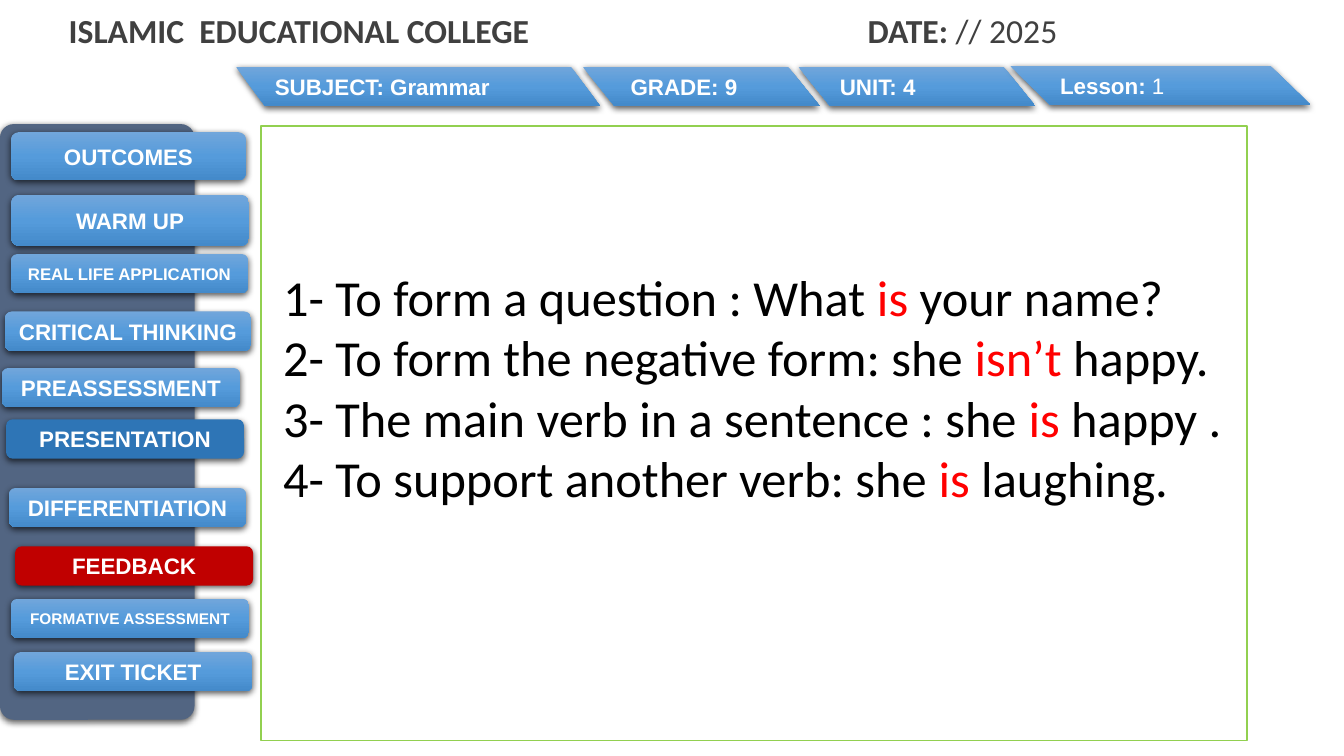
from copy import deepcopy
from pptx import Presentation
from pptx.dml.color import RGBColor
from pptx.enum.shapes import MSO_SHAPE
from pptx.enum.text import MSO_ANCHOR, MSO_AUTO_SIZE, PP_ALIGN
from pptx.oxml import parse_xml
from pptx.oxml.ns import nsdecls, qn
from pptx.util import Pt

HUES = {
    "top": "71A6DB", "mid": "559BDB", "low": "448ACA",
    "panel": "526582", "now": "2E75B6", "alert": "C00000",
    "frame": "92D050", "head": "404040", "white": "FFFFFF",
    "black": "000000", "red": "FF0000",
}
SHADE = (
    f'<a:outerShdw {nsdecls("a")} blurRad="57150" dist="19050" dir="5400000" '
    'algn="ctr" rotWithShape="0"><a:srgbClr val="000000">'
    '<a:alpha val="63000"/></a:srgbClr></a:outerShdw>'
)


def add_run(para, text, size, hue, bold=False, face="Arial"):
    run = para.add_run()
    run.text = text
    run.font.name = face
    run.font.size = Pt(size)
    run.font.bold = bold
    run.font.color.rgb = RGBColor.from_string(HUES[hue])


def add_tile(kind, left, top, width, height, hue=None):
    tile = slide.shapes.add_shape(kind, Pt(left), Pt(top), Pt(width), Pt(height))
    tile.line.fill.background()
    tile.shadow.inherit = False
    props = tile.element.spPr
    props.find(qn("a:effectLst")).append(parse_xml(SHADE))
    tile.text_frame.vertical_anchor = MSO_ANCHOR.MIDDLE
    if hue:
        tile.fill.solid()
        tile.fill.fore_color.rgb = RGBColor.from_string(HUES[hue])
    else:
        tile.fill.gradient()
        tile.fill.gradient_angle = 270
        stops = props.find(".//" + qn("a:gsLst"))
        stops.append(deepcopy(stops[-1]))
        for stop, name, place in zip(tile.fill.gradient_stops, ("top", "mid", "low"), (0, 0.5, 1)):
            stop.color.rgb = RGBColor.from_string(HUES[name])
            stop.position = place
    return tile


deck = Presentation()
deck.slide_width = Pt(960)
deck.slide_height = Pt(540)
slide = deck.slides.add_slide(deck.slide_layouts[6])

panel = add_tile(MSO_SHAPE.ROUNDED_RECTANGLE, 0, 88.6, 139, 425.5, "panel")
panel.adjustments[0] = 0.071

STEPS = [
    ("OUTCOMES", 7.9, 94.3, 167.8, 34.6, 16, None),
    ("WARM UP", 7.9, 139, 170, 36.7, 16, None),
    ("REAL LIFE APPLICATION", 7.9, 181.4, 169.2, 28.1, 12, None),
    ("CRITICAL THINKING", 3.6, 222.5, 175.7, 28.1, 16, None),
    ("PREASSESSMENT", 1.4, 262.8, 170, 28.1, 16, None),
    ("PRESENTATION", 4.3, 299.5, 170, 28.1, 16, "now"),
    ("DIFFERENTIATION", 6.5, 348.5, 169.2, 28.1, 16, None),
    ("FEEDBACK", 10.8, 390.2, 170, 28.1, 16, "alert"),
    ("FORMATIVE ASSESSMENT", 7.9, 427.7, 170, 28.1, 11, None),
    ("EXIT TICKET", 10.1, 465.8, 170, 28.1, 16, None),
]
for label, left, top, width, height, size, hue in STEPS:
    step = add_tile(MSO_SHAPE.ROUNDED_RECTANGLE, left, top, width, height, hue)
    para = step.text_frame.paragraphs[0]
    para.alignment = PP_ALIGN.CENTER
    add_run(para, label, size, "white", True)

frame = slide.shapes.add_shape(MSO_SHAPE.RECTANGLE, Pt(186.5), Pt(90), Pt(704.2), Pt(439.2))
frame.shadow.inherit = False
frame.fill.background()
frame.line.color.rgb = RGBColor.from_string(HUES["frame"])
frame.line.width = Pt(1)

TABS = [
    ("SUBJECT: Grammar", "", 168.5, 47.5, 260, 0.04, 7.2),
    ("GRADE: 9", "", 416.2, 47.5, 169.2, 0.067, 11.6),
    ("UNIT: 4", "", 570.2, 47.5, 169.2, 0.067, 7.2),
    ("Lesson: ", "1", 721.4, 46.8, 214.6, 0.067, 7.2),
]
for label, value, left, top, width, lean, inset in TABS:
    tab = add_tile(MSO_SHAPE.DOUBLE_WAVE, left, top, width, 28.1)
    tab.adjustments[0] = 0
    tab.adjustments[1] = lean
    tab.text_frame.margin_left = Pt(inset)
    para = tab.text_frame.paragraphs[0]
    para.alignment = PP_ALIGN.LEFT
    add_run(para, label, 16, "white", True)
    if value:
        add_run(para, value, 16, "white")

head = slide.shapes.add_textbox(Pt(42), Pt(3.6), Pt(906), Pt(37.4)).text_frame
head.word_wrap = True
para = head.paragraphs[0]
para._p.get_or_add_pPr().append(parse_xml(
    f'<a:tabLst {nsdecls("a")}><a:tab pos="{Pt(570.7)}" algn="l"/></a:tabLst>'))
add_run(para, "ISLAMIC  EDUCATIONAL COLLEGE\tDATE: ", 24, "head", True, "Calibri")
add_run(para, "// 2025", 24, "head", False, "Calibri")

USES = [
    ("1- To form a question : What ", "is", " your name?"),
    ("2- To form the negative form: she ", "isn’t", " happy."),
    ("3- The main verb in a sentence : she ", "is", " happy ."),
    ("4- To support another verb: she ", "is", " laughing."),
]
body = slide.shapes.add_textbox(Pt(195.1), Pt(186.5), Pt(686.9), Pt(181.4)).text_frame
body.word_wrap = True
body.auto_size = MSO_AUTO_SIZE.SHAPE_TO_FIT_TEXT
for row, parts in enumerate(USES):
    para = body.add_paragraph() if row else body.paragraphs[0]
    for text, hue in zip(parts, ("black", "red", "black")):
        add_run(para, text, 36, hue, False, "Calibri")

deck.save("out.pptx")
